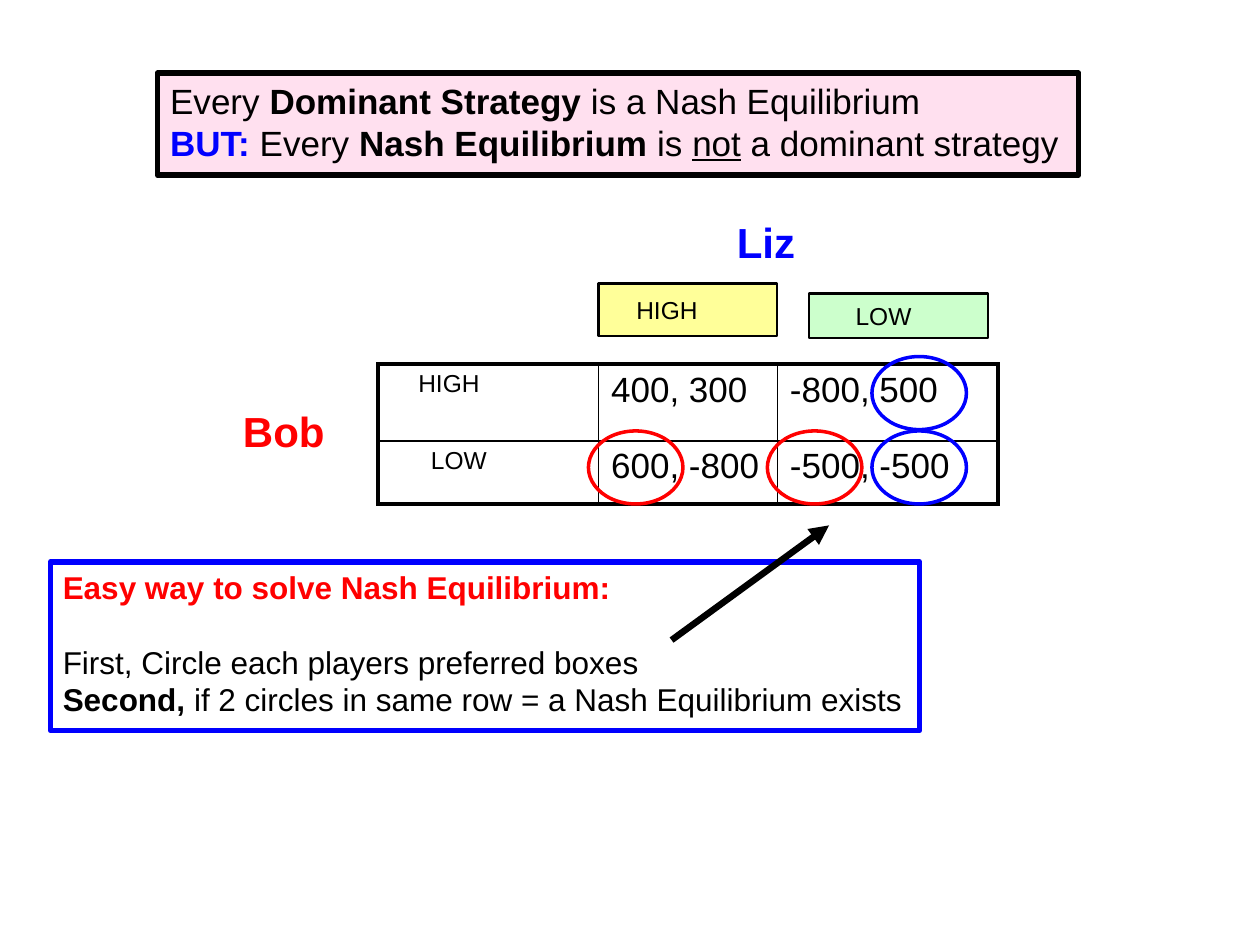
import pptx
import pptx.util
import pptx.dml.color
import pptx.enum.shapes
import pptx.enum.text
import pptx.oxml
import pptx.oxml.ns

Inches, Pt = pptx.util.Inches, pptx.util.Pt
RGB = pptx.dml.color.RGBColor
Shape = pptx.enum.shapes.MSO_SHAPE
Auto = pptx.enum.text.MSO_AUTO_SIZE
Anchor = pptx.enum.text.MSO_ANCHOR
Align = pptx.enum.text.PP_ALIGN
qn = pptx.oxml.ns.qn

BLACK = RGB(0, 0, 0)
RED = RGB(255, 0, 0)
BLUE = RGB(0, 0, 255)
PINK = RGB(0xFF, 0x99, 0xCC)
YELLOW = RGB(0xFF, 0xFF, 0x99)
GREEN = RGB(0xCC, 0xFF, 0xCC)

CLAIM = [
    [("Every ", ""), ("Dominant Strategy", "b"), (" is a Nash Equilibrium", "")],
    [("BUT:", "bc"), (" Every ", ""), ("Nash Equilibrium", "b"), (" is ", ""),
     ("not", "u"), (" a dominant strategy", "")],
]
STEPS = [
    [("Easy way to solve Nash Equilibrium:", "br")],
    [("First, Circle each players preferred boxes", "")],
    [("Second, ", "b"), ("if 2 circles in same row = a Nash Equilibrium exists", "")],
]
NAMES = [("Liz", "bc", (5.75, 1.67, 0.66, 0.5)), ("Bob", "br", (1.83, 3.17, 0.85, 0.5))]
HEADS = [("HIGH", YELLOW, 0.3, (4.75, 2.25, 1.42, 0.42)),
         ("LOW", GREEN, 0.37, (6.42, 2.33, 1.42, 0.35))]
GAME = [("HIGH", "400, 300", "-800, 500"), ("LOW", "600, -800", "-500, -500")]
INDENT = [0.32, 0.42]
COLS = [1.75, 1.42, 1.75]
ROWS = [0.61, 0.5]
LEFT, TOP = 3, 2.89
RINGS = [(1, 2, 0), (1, 1, 0), (0, 2, 1), (1, 2, 1)]
INK = {"r": RED, "c": BLUE}


def place(shape, box):
    shape.left, shape.top, shape.width, shape.height = map(Inches, box)


def write(frame, lines, size, wrap=False):
    frame.word_wrap = wrap
    frame.auto_size = Auto.NONE
    for i, line in enumerate(lines):
        para = frame.paragraphs[0] if i == 0 else frame.add_paragraph()
        para.alignment = Align.LEFT
        para.font.size = Pt(size)
        para.font.name = "Arial"
        para.font.color.rgb = BLACK
        for text, style in line:
            run = para.add_run()
            run.text = text
            if "b" in style:
                run.font.bold = True
            if "u" in style:
                run.font.underline = True
            for key in INK:
                if key in style:
                    run.font.color.rgb = INK[key]


def draw(slide, kind, box, line, width, fill=None):
    shape = slide.shapes.add_shape(kind, *map(Inches, box))
    shape.shadow.inherit = False
    shape.line.color.rgb = line
    shape.line.width = Pt(width)
    if fill is None:
        shape.fill.background()
    else:
        shape.fill.solid()
        shape.fill.fore_color.rgb = fill
    return shape


def border(cell, widths):
    props = cell._tc.get_or_add_tcPr()
    for i, (side, width) in enumerate(zip("LRTB", widths)):
        line = pptx.oxml.parse_xml(
            f'<a:ln{side} xmlns:a="http://schemas.openxmlformats.org/drawingml/2006/main" '
            f'w="{Pt(width)}"><a:solidFill><a:srgbClr val="{BLACK}"/></a:solidFill></a:ln{side}>')
        props.insert(i, line)


def add_claim(slide):
    title = slide.shapes.title
    place(title, (1.25, 0.58, 7.31, 0.81))
    title.fill.solid()
    title.fill.fore_color.rgb = PINK
    color = title._element.spPr.find(qn("a:solidFill"))[0]
    color.append(color.makeelement(qn("a:alpha"), {"val": "30000"}))
    title.line.color.rgb = BLACK
    title.line.width = Pt(3.25)
    title.text_frame.vertical_anchor = Anchor.TOP
    write(title.text_frame, CLAIM, 20)


def add_game(slide):
    frame = slide.shapes.add_table(len(ROWS), len(COLS), Inches(LEFT), Inches(TOP),
                                   Inches(sum(COLS)), Inches(sum(ROWS)))
    table = frame.table
    table.first_row = table.horz_banding = False
    for col, width in zip(table.columns, COLS):
        col.width = Inches(width)
    for r, (row, height) in enumerate(zip(GAME, ROWS)):
        table.rows[r].height = Inches(height)
        for c, text in enumerate(row):
            cell = table.cell(r, c)
            cell.fill.background()
            edges = (c == 0, c == len(COLS) - 1, r == 0, r == len(ROWS) - 1)
            border(cell, [2.25 if edge else 1 for edge in edges])
            if c == 0:
                cell.margin_left = Inches(INDENT[r])
            para = cell.text_frame.paragraphs[0]
            para.text = text
            para.font.size = Pt(20 if c else 14)
            para.font.name = "Arial"
            para.font.color.rgb = BLACK


def main():
    deck = pptx.Presentation()
    deck.slide_width, deck.slide_height = Inches(10), Inches(7.5)
    slide = deck.slides.add_slide(deck.slide_layouts[5])
    add_claim(slide)
    for name, style, box in NAMES:
        label = slide.shapes.add_textbox(*map(Inches, box))
        write(label.text_frame, [[(name, style)]], 24)
    add_game(slide)
    for text, fill, indent, box in HEADS:
        head = draw(slide, Shape.RECTANGLE, box, BLACK, 1.25, fill)
        head.text_frame.margin_left = Inches(indent)
        head.text_frame.vertical_anchor = Anchor.MIDDLE
        write(head.text_frame, [[(text, "")]], 14, True)
    steps = draw(slide, Shape.RECTANGLE, (0.4, 4.46, 6.9, 1.34), BLUE, 3)
    steps.text_frame.vertical_anchor = Anchor.TOP
    write(steps.text_frame, STEPS, 18)
    steps.text_frame.paragraphs[1].space_before = Pt(21)
    for row, col, side in RINGS:
        left = LEFT + sum(COLS[:col]) - 0.08 + 0.83 * side
        draw(slide, Shape.OVAL, (left, 2.83 + 0.59 * row, 0.75, 0.58),
             BLUE if side else RED, 2)
    arrow = slide.shapes.add_connector(pptx.enum.shapes.MSO_CONNECTOR.STRAIGHT,
                                       *map(Inches, (5.33, 5.08, 6.58, 4.17)))
    arrow.line.color.rgb = BLACK
    arrow.line.width = Pt(3.75)
    line = arrow.line._get_or_add_ln()
    line.append(line.makeelement(qn("a:tailEnd"), {"type": "triangle"}))
    props = arrow._element.spPr
    props.append(props.makeelement(qn("a:effectLst"), {}))
    deck.save("out.pptx")


if __name__ == "__main__":
    main()
